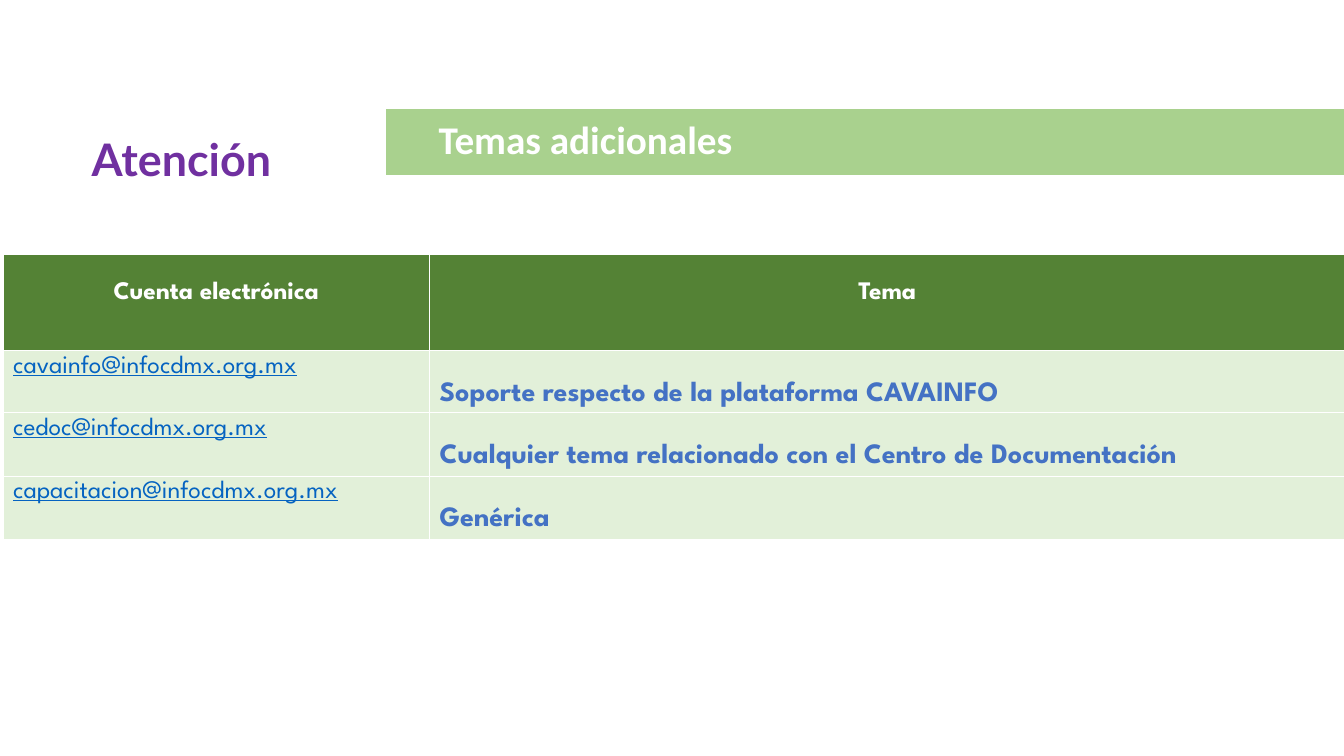
from pptx import Presentation
from pptx.dml.color import RGBColor
from pptx.enum.shapes import MSO_SHAPE
from pptx.enum.text import MSO_ANCHOR, MSO_AUTO_SIZE, PP_ALIGN
from pptx.util import Inches, Pt

COLORS = {
    "white": "FFFFFF",
    "purple": "7030A0",
    "banner": "A9D18E",
    "header": "548235",
    "row": "E2F0D9",
    "account": "0563C1",
    "topic": "4472C4",
}
TABLE_FONT = "League Spartan"
HEADINGS = ("Cuenta electrónica", "Tema")
ACCOUNTS = [
    ("cavainfo@infocdmx.org.mx", "Soporte respecto de la plataforma CAVAINFO"),
    ("cedoc@infocdmx.org.mx",
     "Cualquier tema relacionado con el Centro de Documentación"),
    ("capacitacion@infocdmx.org.mx", "Genérica"),
]
COLUMN_WIDTHS = (4.23, 9.08)
ROW_HEIGHTS = (0.96, 0.61, 0.63, 0.63)


def rgb(name):
    return RGBColor.from_string(COLORS[name])


def write(frame, text, font, size, color, bold=True, underline=False,
          align=PP_ALIGN.LEFT, spacing=1.0):
    """Put one formatted paragraph in a text frame."""
    frame.text = text
    paragraph = frame.paragraphs[0]
    paragraph.alignment = align
    paragraph.line_spacing = spacing
    style = paragraph.runs[0].font
    style.name = font
    style.size = Pt(size)
    style.bold = bold
    style.underline = underline
    style.color.rgb = rgb(color)


def add_title(slide, text):
    title = slide.shapes.title
    title.left, title.top = Inches(-0.22), Inches(1.32)
    title.width, title.height = Inches(4.04), Inches(0.67)
    frame = title.text_frame
    frame.word_wrap = True
    frame.auto_size = MSO_AUTO_SIZE.NONE
    frame.vertical_anchor = MSO_ANCHOR.TOP
    write(frame, text, "Lato", 32, "purple", align=PP_ALIGN.CENTER, spacing=0.9)


def add_banner(slide, text):
    banner = slide.shapes.add_shape(MSO_SHAPE.RECTANGLE, Inches(3.82),
                                    Inches(1.07), Inches(9.56), Inches(0.67))
    banner.shadow.inherit = False
    banner.fill.solid()
    banner.fill.fore_color.rgb = rgb("banner")
    banner.line.color.rgb = rgb("white")
    banner.line.width = Pt(1)
    frame = banner.text_frame
    frame.word_wrap = True
    frame.vertical_anchor = MSO_ANCHOR.MIDDLE
    frame.margin_left = Inches(0.53)
    frame.margin_top = frame.margin_right = frame.margin_bottom = Inches(0.08)
    write(frame, text, "Calibri", 28, "white", spacing=0.9)


def fill_cell(cell, color):
    cell.fill.solid()
    cell.fill.fore_color.rgb = rgb(color)


def add_accounts_table(slide):
    table = slide.shapes.add_table(
        len(ROW_HEIGHTS), len(COLUMN_WIDTHS), Inches(0.03), Inches(2.52),
        Inches(sum(COLUMN_WIDTHS)), Inches(sum(ROW_HEIGHTS))).table
    table.horz_banding = False
    for column, width in zip(table.columns, COLUMN_WIDTHS):
        column.width = Inches(width)
    for row, height in zip(table.rows, ROW_HEIGHTS):
        row.height = Inches(height)

    for cell, heading in zip(table.rows[0].cells, HEADINGS):
        fill_cell(cell, "header")
        cell.margin_top = Inches(0.28)
        write(cell.text_frame, heading, TABLE_FONT, 18, "white",
              align=PP_ALIGN.CENTER)

    for index, (account, topic) in enumerate(ACCOUNTS, start=1):
        account_cell, topic_cell = table.rows[index].cells
        fill_cell(account_cell, "row")
        fill_cell(topic_cell, "row")
        write(account_cell.text_frame, account, TABLE_FONT, 18, "account",
              bold=False, underline=True)
        write(topic_cell.text_frame, topic, TABLE_FONT, 20, "topic", spacing=2.0)


def main():
    presentation = Presentation()
    presentation.slide_width = Inches(13.33)
    presentation.slide_height = Inches(7.5)
    title_only = presentation.slide_layouts[5]
    slide = presentation.slides.add_slide(title_only)
    add_accounts_table(slide)
    add_title(slide, "Atención")
    add_banner(slide, "Temas adicionales")
    presentation.save("out.pptx")


if __name__ == "__main__":
    main()
